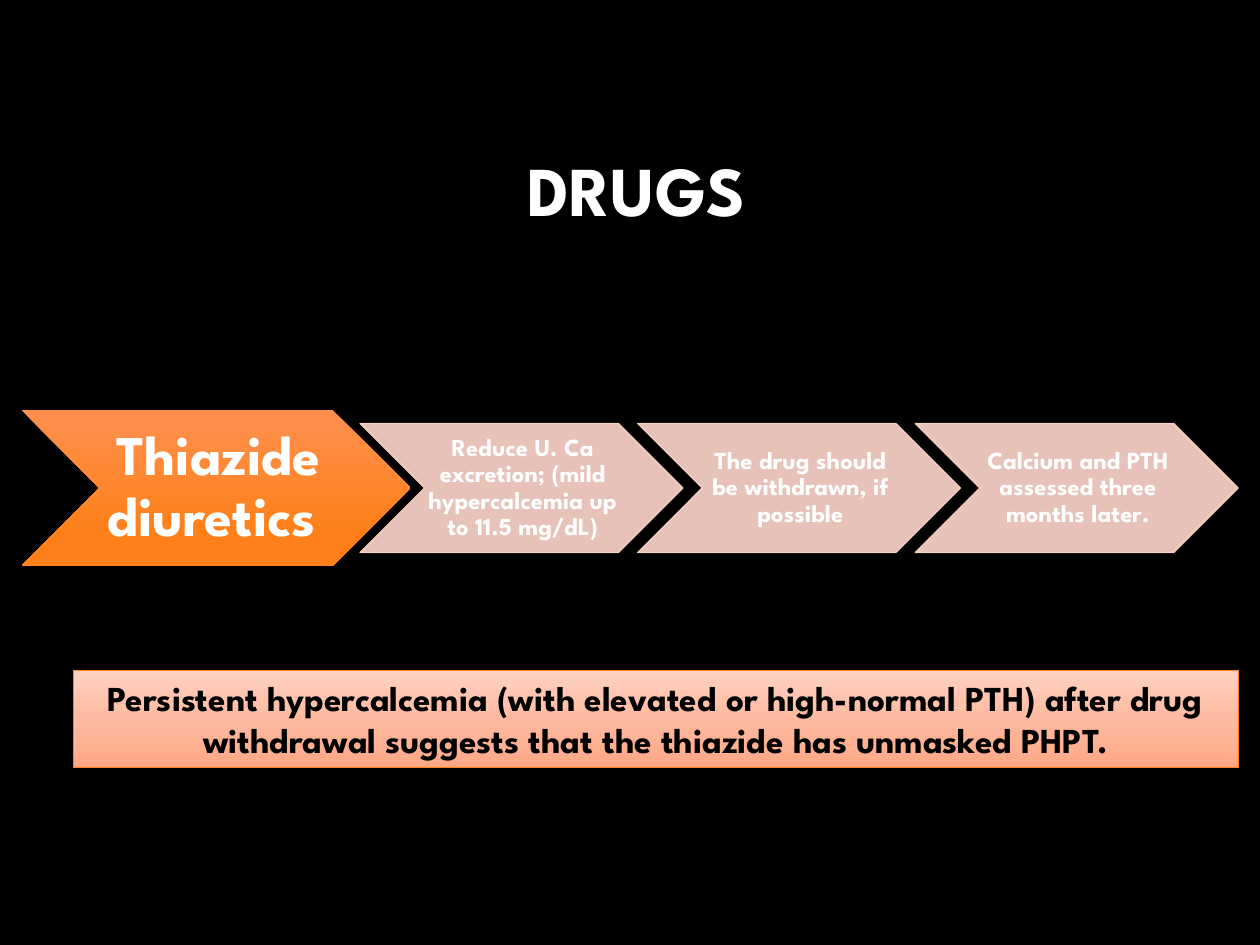
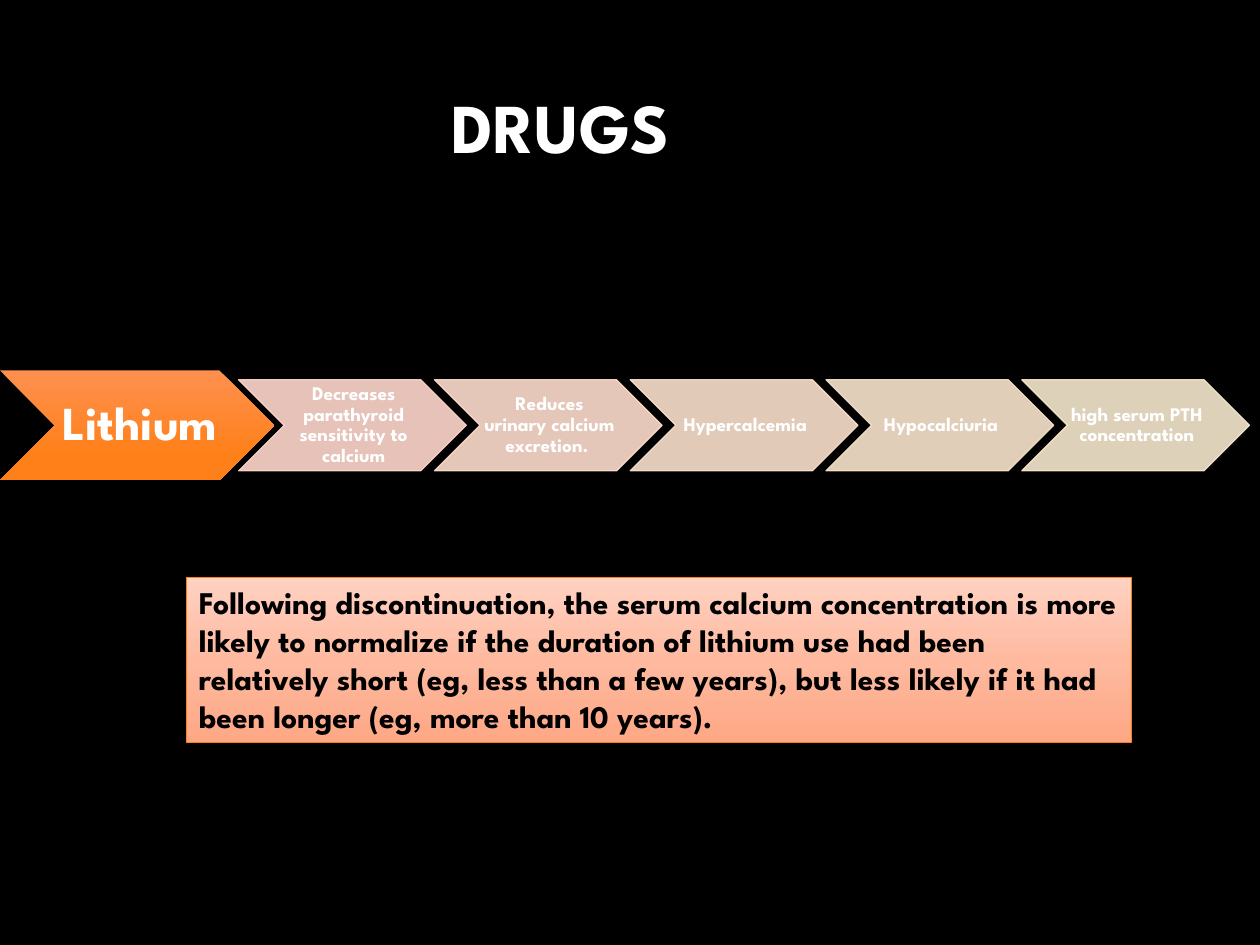
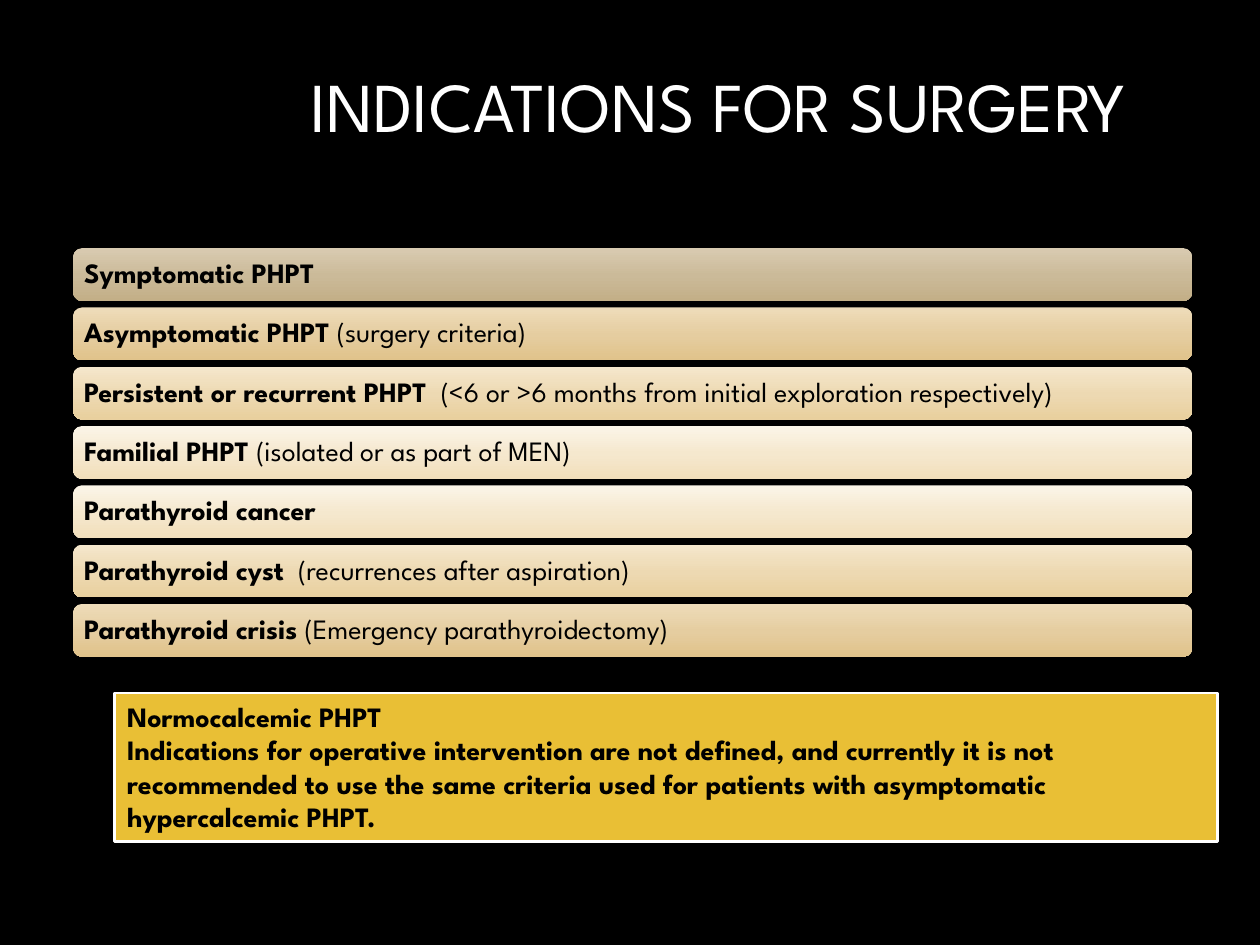
from copy import deepcopy
from typing import NamedTuple

from pptx import Presentation
from pptx.dml.color import RGBColor
from pptx.enum.shapes import MSO_SHAPE
from pptx.enum.text import MSO_ANCHOR, MSO_AUTO_SIZE, PP_ALIGN
from pptx.oxml.ns import qn
from pptx.oxml.xmlchemy import OxmlElement
from pptx.shapes.autoshape import Shape
from pptx.slide import Slide
from pptx.text.text import TextFrame
from pptx.util import Pt

CHEVRON = MSO_SHAPE.CHEVRON
RECTANGLE = MSO_SHAPE.RECTANGLE
ROUNDED = MSO_SHAPE.ROUNDED_RECTANGLE
TOP, MIDDLE = MSO_ANCHOR.TOP, MSO_ANCHOR.MIDDLE
LEFT, CENTER = PP_ALIGN.LEFT, PP_ALIGN.CENTER
FIXED, GROW = MSO_AUTO_SIZE.NONE, MSO_AUTO_SIZE.SHAPE_TO_FIT_TEXT

FONT = "League Spartan"
TITLE_ONLY = 5
COLORS = {
    "background": "000000",
    "light_text": "FFFFFF",
    "dark_text": "000000",
    "step_1": "FFD8CD",
    "step_2": "FDDDCD",
    "step_3": "FBE1CD",
    "step_4": "F9E5CD",
    "step_5": "F7E8CE",
    "orange_line": "FE801A",
    "gold": "E9BF35",
    "gold_line": "FFFFFF",
    "lead_top": "FE904F",
    "lead_bottom": "FF8019",
    "peach_top": "FFD2C2",
    "peach_middle": "FEB99F",
    "peach_bottom": "FEA785",
    "taupe_top": "D9CBB1",
    "taupe_middle": "CBBA99",
    "taupe_bottom": "C3AF87",
    "tan_top": "EEDCBA",
    "tan_middle": "E5CDA0",
    "tan_bottom": "E0C38B",
    "sand_top": "F5E7CC",
    "sand_middle": "EDD9B2",
    "sand_bottom": "E9D09E",
    "cream_top": "FBF5E8",
    "cream_middle": "F5E8CE",
    "cream_bottom": "F2DFBB",
}
LEAD_STOPS = ((0, "lead_top"), (0.78, "lead_bottom"))

CHEVRON_RATIO = 2.5
STEP_SCALE = 0.83
LEAD_ADVANCE = 0.87
STEP_ADVANCE = 0.86
STEP_OPACITY = 90

BAR_TOP = 141.8
BAR_PITCH = 33.88


class Box(NamedTuple):
    left: float
    top: float
    width: float
    height: float


class Step(NamedTuple):
    text: str
    color: str


class Process(NamedTuple):
    lead: str
    left: float
    top: float
    height: float
    lead_size: float
    step_size: float
    steps: tuple[Step, ...]


class Indication(NamedTuple):
    name: str
    detail: str
    tone: str


THIAZIDE = Process("Thiazide diuretics ", 12.4, 234.4, 88.9, 32, 14, (
    Step("Reduce U. Ca excretion; (mild hypercalcemia up to 11.5 mg/dL)", "step_1"),
    Step("The drug should be withdrawn, if possible", "step_1"),
    Step("Calcium and PTH assessed three months later.", "step_1"),
))
LITHIUM = Process("Lithium ", 0, 211.7, 62.7, 27, 11, (
    Step("Decreases parathyroid sensitivity to calcium", "step_1"),
    Step("Reduces urinary calcium excretion. ", "step_2"),
    Step("Hypercalcemia", "step_3"),
    Step("Hypocalciuria", "step_4"),
    Step("high serum PTH concentration", "step_5"),
))
INDICATIONS = (
    Indication("Symptomatic PHPT", "", "taupe"),
    Indication("Asymptomatic PHPT", " (surgery criteria)", "tan"),
    Indication("Persistent or recurrent PHPT",
               "  (<6 or >6 months from initial exploration respectively)", "sand"),
    Indication("Familial PHPT", " (isolated or as part of MEN)", "cream"),
    Indication("Parathyroid cancer", "", "cream"),
    Indication("Parathyroid cyst", "  (recurrences after aspiration)", "sand"),
    Indication("Parathyroid crisis", " (Emergency parathyroidectomy)", "tan"),
)


def rgb(name: str) -> RGBColor:
    return RGBColor.from_string(COLORS[name])


def tone_stops(tone: str) -> tuple[tuple[float, str], ...]:
    return (0, f"{tone}_top"), (0.52, f"{tone}_middle"), (1, f"{tone}_bottom")


def write_text(
    frame: TextFrame,
    *lines: str,
    size: float,
    color: str = "dark_text",
    bold: bool = True,
    plain_tail: str = "",
    alignment: PP_ALIGN = LEFT,
    spacing: float = 1.0,
    anchor: MSO_ANCHOR = MIDDLE,
    auto_size: MSO_AUTO_SIZE = FIXED,
    margins: tuple[float, float, float, float] = (7.2, 3.6, 7.2, 3.6),
) -> None:
    frame.word_wrap = True
    frame.auto_size = auto_size
    frame.vertical_anchor = anchor
    (frame.margin_left, frame.margin_top,
     frame.margin_right, frame.margin_bottom) = map(Pt, margins)
    for index, line in enumerate(lines):
        paragraph = frame.add_paragraph() if index else frame.paragraphs[0]
        paragraph.alignment = alignment
        paragraph.line_spacing = spacing
        for text, weight in ((line, bold), (plain_tail, False)):
            if text:
                run = paragraph.add_run()
                run.text = text
                run.font.name = FONT
                run.font.size = Pt(size)
                run.font.bold = weight
                run.font.color.rgb = rgb(color)


def add_box(slide: Slide, kind: MSO_SHAPE, box: Box) -> Shape:
    shape = slide.shapes.add_shape(kind, *map(Pt, box))
    shape.shadow.inherit = False
    shape.line.fill.background()
    return shape


def fill_gradient(shape: Shape, stops: tuple[tuple[float, str], ...]) -> None:
    shape.fill.gradient()
    shape.fill.gradient_angle = 270
    stop_list = shape._element.spPr.find(f".//{qn('a:gsLst')}")
    while len(stop_list) < len(stops):
        stop_list.append(deepcopy(stop_list[0]))
    for stop, (position, color) in zip(shape.fill.gradient_stops, stops):
        stop.position = position
        stop.color.rgb = rgb(color)


def set_line(shape: Shape, color: str, width: float) -> None:
    shape.line.color.rgb = rgb(color)
    shape.line.width = Pt(width)


def set_opacity(shape: Shape, percent: int) -> None:
    for color in shape._element.spPr.iter(qn("a:srgbClr")):
        alpha = OxmlElement("a:alpha")
        alpha.set("val", str(percent * 1000))
        color.append(alpha)


def add_titled_slide(presentation: Presentation, title: str, box: Box, bold: bool = True) -> Slide:
    slide = presentation.slides.add_slide(presentation.slide_layouts[TITLE_ONLY])
    placeholder = slide.shapes.title
    placeholder.left, placeholder.top, placeholder.width, placeholder.height = map(Pt, box)
    write_text(placeholder.text_frame, title, size=40, color="light_text", bold=bold,
               alignment=CENTER, spacing=0.9)
    return slide


def add_chevron(slide: Slide, text: str, box: Box, size: float, inset: float) -> Shape:
    shape = add_box(slide, CHEVRON, box)
    write_text(shape.text_frame, text, size=size, color="light_text", alignment=CENTER,
               spacing=0.9, margins=(inset, inset / 2, 0, inset / 2))
    return shape


def add_process(slide: Slide, process: Process) -> None:
    lead_width = process.height * CHEVRON_RATIO
    lead_box = Box(process.left, process.top, lead_width, process.height)
    lead = add_chevron(slide, process.lead, lead_box, process.lead_size, 3)
    fill_gradient(lead, LEAD_STOPS)

    width, height = lead_width * STEP_SCALE, process.height * STEP_SCALE
    first_left = process.left + lead_width * LEAD_ADVANCE
    top = process.top + (process.height - height) / 2
    for index, step in enumerate(process.steps):
        box = Box(first_left + index * width * STEP_ADVANCE, top, width, height)
        shape = add_chevron(slide, step.text, box, process.step_size, 1.5)
        shape.fill.solid()
        shape.fill.fore_color.rgb = rgb(step.color)
        set_line(shape, step.color, 0.75)
        set_opacity(shape, STEP_OPACITY)


def add_peach_note(slide: Slide, text: str, box: Box, size: float, alignment: PP_ALIGN) -> None:
    note = add_box(slide, RECTANGLE, box)
    fill_gradient(note, tone_stops("peach"))
    set_line(note, "orange_line", 0.75)
    write_text(note.text_frame, text, size=size, alignment=alignment, anchor=TOP, auto_size=GROW)


def add_indications(slide: Slide) -> None:
    for index, indication in enumerate(INDICATIONS):
        bar = add_box(slide, ROUNDED, Box(41.8, BAR_TOP + index * BAR_PITCH, 639.4, 30.2))
        fill_gradient(bar, tone_stops(indication.tone))
        write_text(bar.text_frame, indication.name, plain_tail=indication.detail, size=16,
                   spacing=0.9, margins=(4.8, 4.8, 4.8, 4.8))


def add_gold_note(slide: Slide, *lines: str) -> None:
    note = add_box(slide, RECTANGLE, Box(65.6, 396, 630, 85))
    note.fill.solid()
    note.fill.fore_color.rgb = rgb("gold")
    set_line(note, "gold_line", 1.5)
    write_text(note.text_frame, *lines, size=16, anchor=TOP, auto_size=GROW)


def main() -> None:
    presentation = Presentation()
    presentation.slide_width, presentation.slide_height = Pt(720), Pt(540)
    background = presentation.slide_master.background.fill
    background.solid()
    background.fore_color.rgb = rgb("background")

    thiazide = add_titled_slide(presentation, "DRUGS", Box(167.8, 59.8, 391.7, 101.5))
    add_process(thiazide, THIAZIDE)
    add_peach_note(
        thiazide,
        "Persistent hypercalcemia (with elevated or high-normal PTH) after drug withdrawal "
        "suggests that the thiazide has unmasked PHPT.",
        Box(41.8, 383, 666, 55.7), 20, CENTER)

    lithium = add_titled_slide(presentation, "DRUGS", Box(66.2, 23.8, 508.3, 101.5))
    add_process(lithium, LITHIUM)
    add_peach_note(
        lithium,
        "Following discontinuation, the serum calcium concentration is more likely to normalize "
        "if the duration of lithium use had been relatively short (eg, less than a few years), "
        "but less likely if it had been longer (eg, more than 10 years).",
        Box(106.6, 329.8, 540, 94.3), 18, LEFT)

    surgery = add_titled_slide(presentation, "INDICATIONS FOR SURGERY",
                               Box(156.2, 12.2, 508.3, 101.5), bold=False)
    add_indications(surgery)
    add_gold_note(
        surgery,
        "Normocalcemic PHPT",
        "Indications for operative intervention are not defined, and currently it is not "
        "recommended to use the same criteria used for patients with asymptomatic "
        "hypercalcemic PHPT.")

    presentation.save("out.pptx")


if __name__ == "__main__":
    main()
